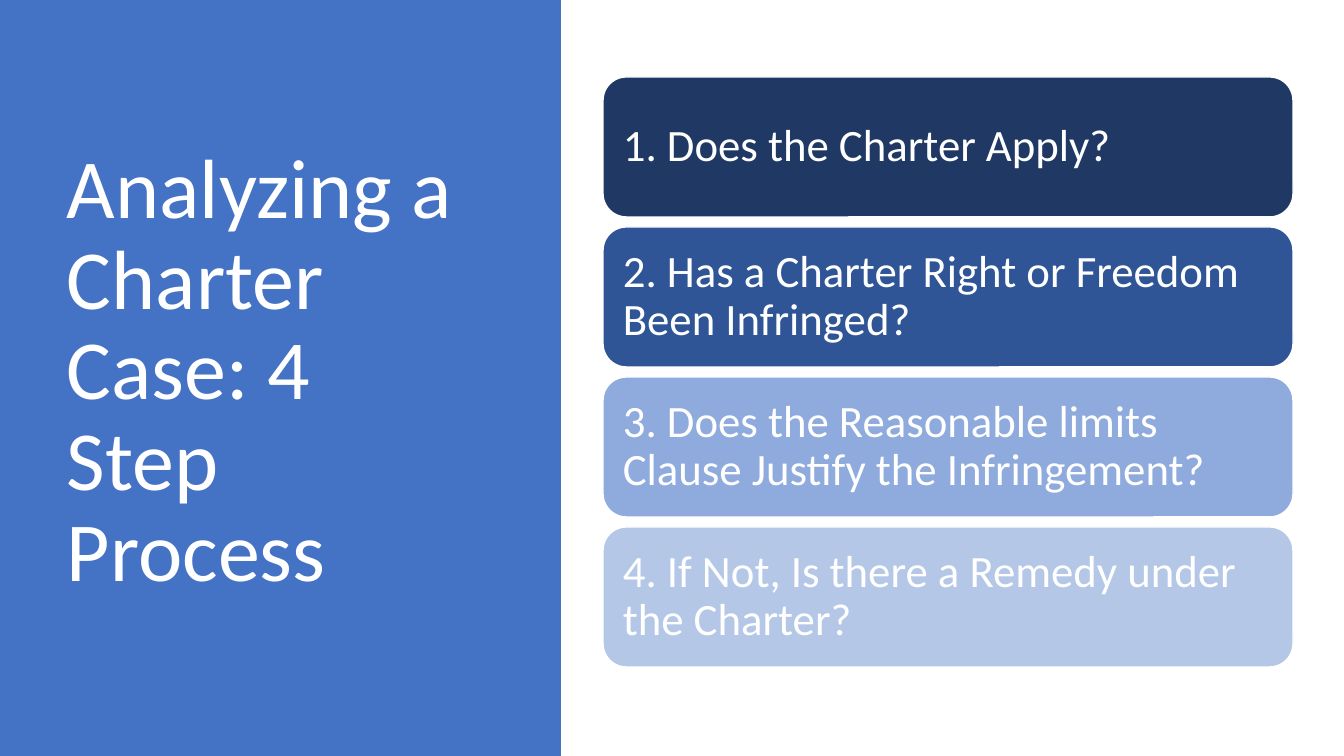
from typing import NamedTuple

from pptx import Presentation
from pptx.dml.color import RGBColor as Rgb
from pptx.enum.shapes import MSO_SHAPE as Kind
from pptx.enum.text import MSO_ANCHOR as Anchor, PP_ALIGN as Align
from pptx.slide import Slide
from pptx.text.text import TextFrame as Frame
from pptx.util import Emu, Pt

SCALE = 914400 / 100.8
HUES = {
    "white": "FFFFFF",
    "panel": "4472C4",
    "navy": "203864",
    "blue": "2F5597",
    "sky": "8FAADC",
    "pale": "B4C7E7",
}
TITLE = "Analyzing a Charter Case: 4 Step Process"
TOP, PITCH = 77, 150


class Box(NamedTuple):
    left: int
    top: int
    width: int
    height: int


class Step(NamedTuple):
    text: str
    hue: str


STEPS = [
    Step("1. Does the Charter Apply?", "navy"),
    Step("2. Has a Charter Right or Freedom Been Infringed?", "blue"),
    Step("3. Does the Reasonable limits Clause Justify the Infringement?", "sky"),
    Step("4. If Not, Is there a Remedy under the Charter?", "pale"),
]


def px(size: int) -> Emu:
    return Emu(round(size * SCALE))


def tint(name: str) -> Rgb:
    return Rgb.from_string(HUES[name])


def place(box: Box) -> list[Emu]:
    return [px(size) for size in box]


def assign(item: object, values: dict[str, object]) -> None:
    for name, value in values.items():
        setattr(item, name, value)


def write(frame: Frame, text: str, size: int, pad: dict[str, int]) -> None:
    assign(frame, {"word_wrap": True, "vertical_anchor": Anchor.MIDDLE})
    assign(frame, {f"margin_{side}": px(gap) for side, gap in pad.items()})
    para = frame.paragraphs[0]
    assign(para, {"alignment": Align.LEFT, "line_spacing": 0.9})
    run = para.add_run()
    run.text = text
    assign(run.font, {"name": "Calibri", "size": Pt(size)})
    run.font.color.rgb = tint("white")


def block(slide: Slide, kind: Kind, box: Box, hue: str, edge: int = 0) -> Frame:
    shape = slide.shapes.add_shape(kind, *place(box))
    shape.shadow.inherit = False
    shape.fill.solid()
    shape.fill.fore_color.rgb = tint(hue)
    if edge:
        shape.line.color.rgb = tint("white")
        shape.line.width = Pt(edge)
    else:
        shape.line.fill.background()
    return shape.text_frame


def main() -> None:
    deck = Presentation()
    assign(deck, {"slide_width": px(1344), "slide_height": px(756)})
    slide = deck.slides.add_slide(deck.slide_layouts[6])
    block(slide, Kind.RECTANGLE, Box(0, 0, 561, 756), "panel")
    title = slide.shapes.add_textbox(*place(Box(57, 69, 419, 607)))
    sides = {"left": 10, "right": 10, "top": 5, "bottom": 5}
    write(title.text_frame, TITLE, 60, sides)
    for index, step in enumerate(STEPS):
        box = Box(603, TOP + index * PITCH, 690, 140)
        frame = block(slide, Kind.ROUNDED_RECTANGLE, box, step.hue, 1)
        write(frame, step.text, 32, dict.fromkeys(sides, 13))
    deck.save("out.pptx")


if __name__ == "__main__":
    main()
